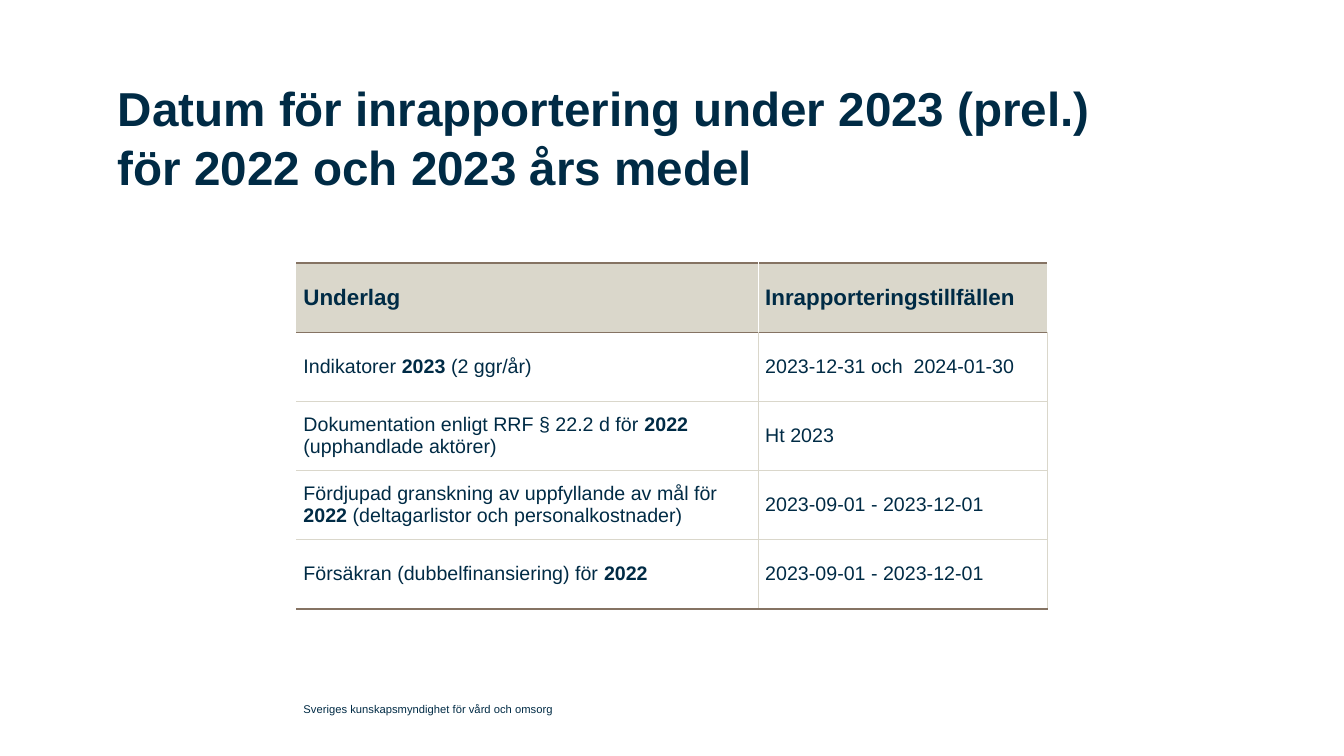
from pptx import Presentation
from pptx.dml.color import RGBColor
from pptx.enum.text import MSO_ANCHOR
from pptx.oxml.ns import qn
from pptx.util import Inches, Pt
from lxml import etree

TOP, MIDDLE = MSO_ANCHOR.TOP, MSO_ANCHOR.MIDDLE

TITLE = "*Datum för inrapportering under 2023 (prel.) för 2022 och 2023 års medel*"
FOOTER = "Sveriges kunskapsmyndighet för vård och omsorg"
ROWS = [
    ("*Underlag*", "*Inrapporteringstillfällen*"),
    ("Indikatorer *2023* (2 ggr/år)", "2023-12-31 och  2024-01-30"),
    ("Dokumentation enligt RRF § 22.2 d för *2022*\n(upphandlade aktörer)", "Ht 2023"),
    ("Fördjupad granskning av uppfyllande av mål för *2022* "
     "(deltagarlistor och personalkostnader)", "2023-09-01 - 2023-12-01"),
    ("Försäkran (dubbelfinansiering) för *2022*", "2023-09-01 - 2023-12-01"),
]
WIDTHS = (4.58, 2.87)
HEIGHT = 3.43

THEME = {
    "font": "Arial", "ink": "002B45", "sand": "DAD7CB", "brown": "857363",
    "white": "FFFFFF", "title": 34, "head": 16, "body": 14, "foot": 8,
}


def write(frame, text, size, gap=0, lines=None):
    para = frame.paragraphs[0]
    para.space_before = para.space_after = Pt(gap)
    if lines:
        para.line_spacing = lines
    for i, part in enumerate(text.split("*")):
        for j, piece in enumerate(part.split("\n")):
            if j:
                para.add_line_break()
            if piece:
                run = para.add_run()
                run.text = piece
                run.font.name = THEME["font"]
                run.font.size = Pt(size)
                run.font.bold = i % 2 == 1
                run.font.color.rgb = RGBColor.from_string(THEME["ink"])


def label(slide, text, box, size, anchor=TOP, lines=None):
    frame = slide.shapes.add_textbox(*map(Inches, box)).text_frame
    frame.word_wrap = True
    frame.vertical_anchor = anchor
    frame.margin_left = frame.margin_right = 0
    frame.margin_top = frame.margin_bottom = 0
    write(frame, text, size, lines=lines)


def edge(cell, side, color, width=1):
    props = cell._tc.get_or_add_tcPr()
    line = etree.SubElement(props, qn("a:ln" + side), w=str(Pt(width)))
    if color:
        fill = etree.SubElement(line, qn("a:solidFill"))
        etree.SubElement(fill, qn("a:srgbClr"), val=THEME[color])
    else:
        etree.SubElement(line, qn("a:noFill"))


def border(cell, row, col):
    last = len(ROWS) - 1
    rule = "white" if row == 0 else "sand"
    edge(cell, "L", rule if col else None)
    edge(cell, "R", rule)
    edge(cell, "T", "brown" if row < 2 else "sand", 1.5 if row == 0 else 1)
    edge(cell, "B", "brown" if row in (0, last) else "sand", 1.5 if row == last else 1)


def grid(slide, left, top):
    box = map(Inches, (left, top, sum(WIDTHS), HEIGHT))
    table = slide.shapes.add_table(len(ROWS), len(WIDTHS), *box).table
    table.first_row = table.horz_banding = False
    for col, width in enumerate(WIDTHS):
        table.columns[col].width = Inches(width)
    for row, texts in enumerate(ROWS):
        table.rows[row].height = Inches(HEIGHT / len(ROWS))
        for col, text in enumerate(texts):
            cell = table.cell(row, col)
            cell.vertical_anchor = MIDDLE
            cell.margin_left = cell.margin_right = Inches(0.07)
            cell.margin_top = cell.margin_bottom = 0
            border(cell, row, col)
            if row == 0:
                cell.fill.solid()
                cell.fill.fore_color.rgb = RGBColor.from_string(THEME["sand"])
                write(cell.text_frame, text, THEME["head"])
            else:
                cell.fill.background()
                write(cell.text_frame, text, THEME["body"])


def main():
    deck = Presentation()
    deck.slide_width, deck.slide_height = Inches(13.33), Inches(7.5)
    slide = deck.slides.add_slide(deck.slide_layouts[6])
    label(slide, TITLE, (1.17, 0.75, 10.15, 1.42), THEME["title"], lines=1.05)
    label(slide, FOOTER, (3.01, 6.89, 5.91, 0.29), THEME["foot"], anchor=MIDDLE)
    grid(slide, 2.94, 2.61)
    deck.save("out.pptx")


if __name__ == "__main__":
    main()
